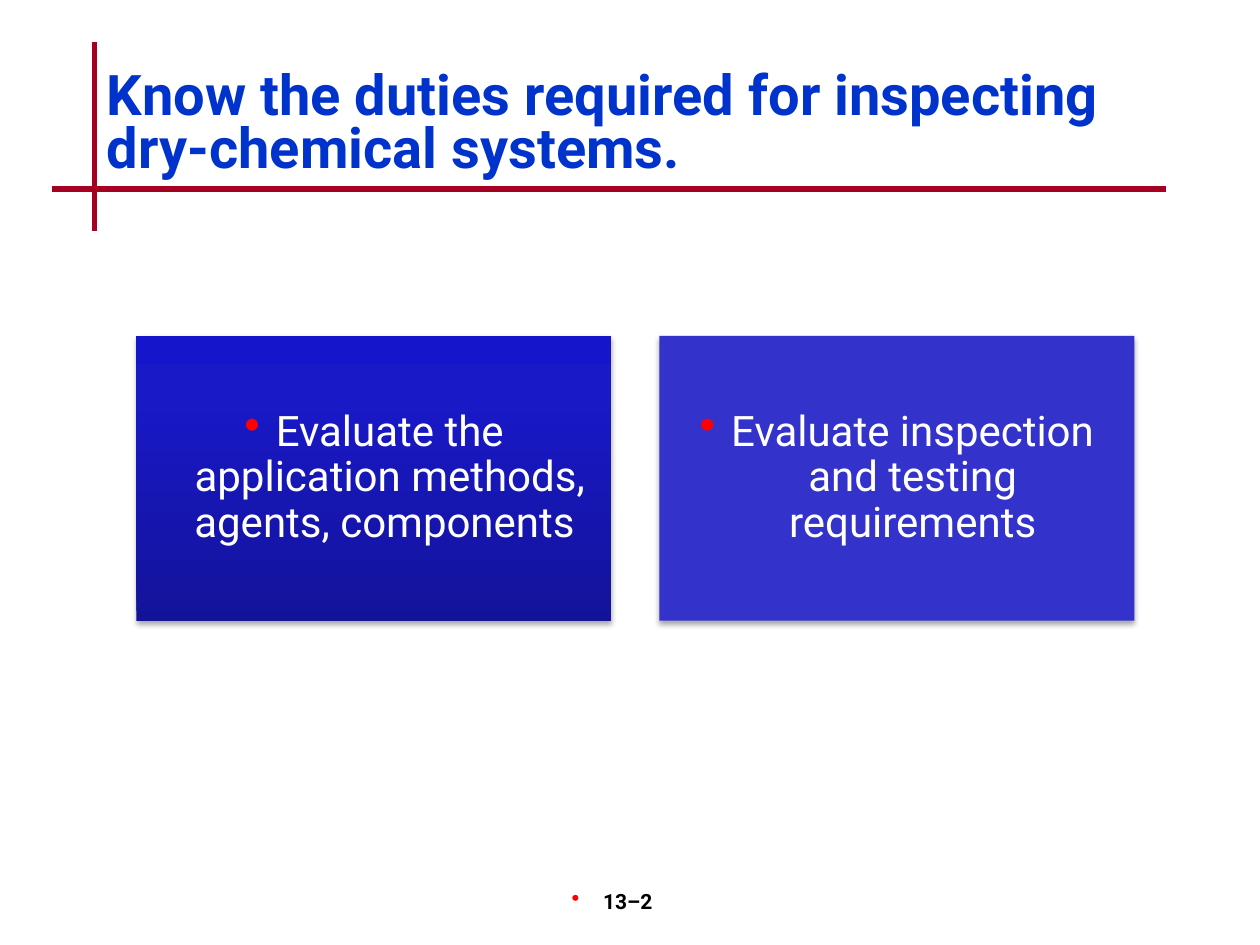
from lxml import etree
from pptx import Presentation
from pptx import util as u
from pptx.dml.color import RGBColor
from pptx.enum import shapes, text
from pptx.oxml import parse_xml
from pptx.oxml.ns import nsdecls, qn

COLORS = {"rule": "A50021", "title": "0033CC", "bullet": "FF0000", "body": "FFFFFF",
          "number": "000000", "card": "3333CC", "shadow": "000000",
          "grad_low": "13139A", "grad_mid": "1919C8", "grad_top": "1515CC"}

deck = Presentation()
deck.slide_width, deck.slide_height = u.Inches(10), u.Inches(7.5)
slide = deck.slides.add_slide(deck.slide_layouts[6])

# The slide is divided into 120 columns and 90 rows
COL, ROW = deck.slide_width // 120, deck.slide_height // 90


def write(box, words, size, color, bold=False, align=text.PP_ALIGN.CENTER,
          anchor=text.MSO_ANCHOR.MIDDLE, spacing=1.0, bullet_size=None):
    frame = box.text_frame
    frame.word_wrap = True
    frame.vertical_anchor = anchor
    para = frame.paragraphs[0]
    para.alignment, para.line_spacing = align, spacing
    if bullet_size:
        props = para._p.get_or_add_pPr()
        props.set("marL", str(u.Inches(0.25)))
        props.set("indent", str(-u.Inches(0.25)))
        for tag in (f'<a:buClr {nsdecls("a")}><a:srgbClr val="{COLORS["bullet"]}"/></a:buClr>',
                    f'<a:buSzPct {nsdecls("a")} val="{bullet_size * 1000}"/>',
                    f'<a:buChar {nsdecls("a")} char="•"/>'):
            props.append(parse_xml(tag))
    run = para.add_run()
    run.text = words
    run.font.name, run.font.size, run.font.bold = "Roboto", u.Pt(size), bold
    run.font.color.rgb = RGBColor.from_string(COLORS[color])
    return frame


# Crossed rules beside and under the title
for x1, y1, x2, y2 in ((9, 4, 9, 22), (5, 18, 111, 18)):
    rule = slide.shapes.add_connector(shapes.MSO_CONNECTOR.STRAIGHT,
                                      x1 * COL, y1 * ROW, x2 * COL, y2 * ROW)
    rule.line.color.rgb = RGBColor.from_string(COLORS["rule"])
    rule.line.width = u.Pt(3)
    etree.SubElement(rule._element.spPr, qn("a:effectLst"))

# Page number
number = slide.shapes.add_textbox(47 * COL, 84 * ROW, 25 * COL, 6 * ROW)
write(number, "13–2", 12, "number", bold=True, anchor=text.MSO_ANCHOR.TOP,
      bullet_size=110).margin_right = u.Inches(0.3)

# Title
title = slide.shapes.add_textbox(9 * COL, 6 * ROW, 102 * COL, 12 * ROW)
write(title, "Know the duties required for inspecting dry-chemical systems.", 32, "title",
      bold=True, align=text.PP_ALIGN.LEFT, spacing=0.8)

# Two duty cards, the first with a gradient
duties = ("Evaluate the application methods, agents, components ",
          "Evaluate inspection and testing requirements")
card_width, card_height, pitch = u.Inches(3.77), u.Inches(2.26), u.Inches(4.15)
for i, duty in enumerate(duties):
    card = slide.shapes.add_shape(shapes.MSO_SHAPE.RECTANGLE, 13 * COL + i * pitch,
                                  32 * ROW, card_width, card_height)
    card.line.fill.background()
    card.fill.solid()
    card.fill.fore_color.rgb = RGBColor.from_string(COLORS["card"])
    props = card._element.spPr
    if i == 0:
        stops = "".join(f'<a:gs pos="{pos * 1000}"><a:srgbClr val="{COLORS[name]}"/></a:gs>'
                        for pos, name in ((0, "grad_low"), (80, "grad_mid"), (100, "grad_top")))
        props.replace(props.find(qn("a:solidFill")), parse_xml(
            f'<a:gradFill {nsdecls("a")} rotWithShape="1"><a:gsLst>{stops}</a:gsLst>'
            f'<a:lin ang="{270 * 60000}" scaled="0"/></a:gradFill>'))
    props.append(parse_xml(
        f'<a:effectLst {nsdecls("a")}><a:outerShdw blurRad="{u.Pt(3.1)}" dist="{u.Pt(1.8)}" '
        f'dir="{90 * 60000}" rotWithShape="0"><a:srgbClr val="{COLORS["shadow"]}">'
        f'<a:alpha val="35000"/></a:srgbClr></a:outerShdw></a:effectLst>'))
    frame = write(card, duty, 24, "body", spacing=0.9, bullet_size=110)
    frame.margin_top = frame.margin_bottom = u.Inches(0.1)

deck.save("out.pptx")
